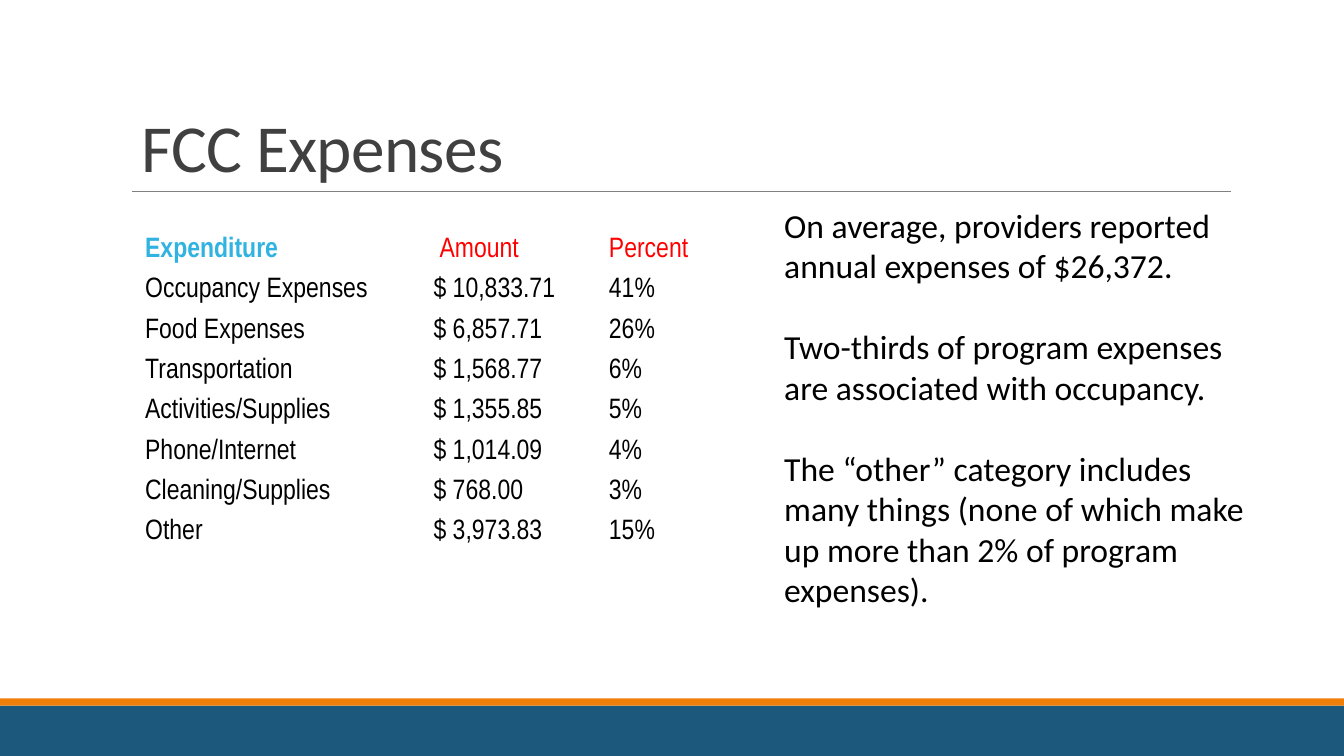
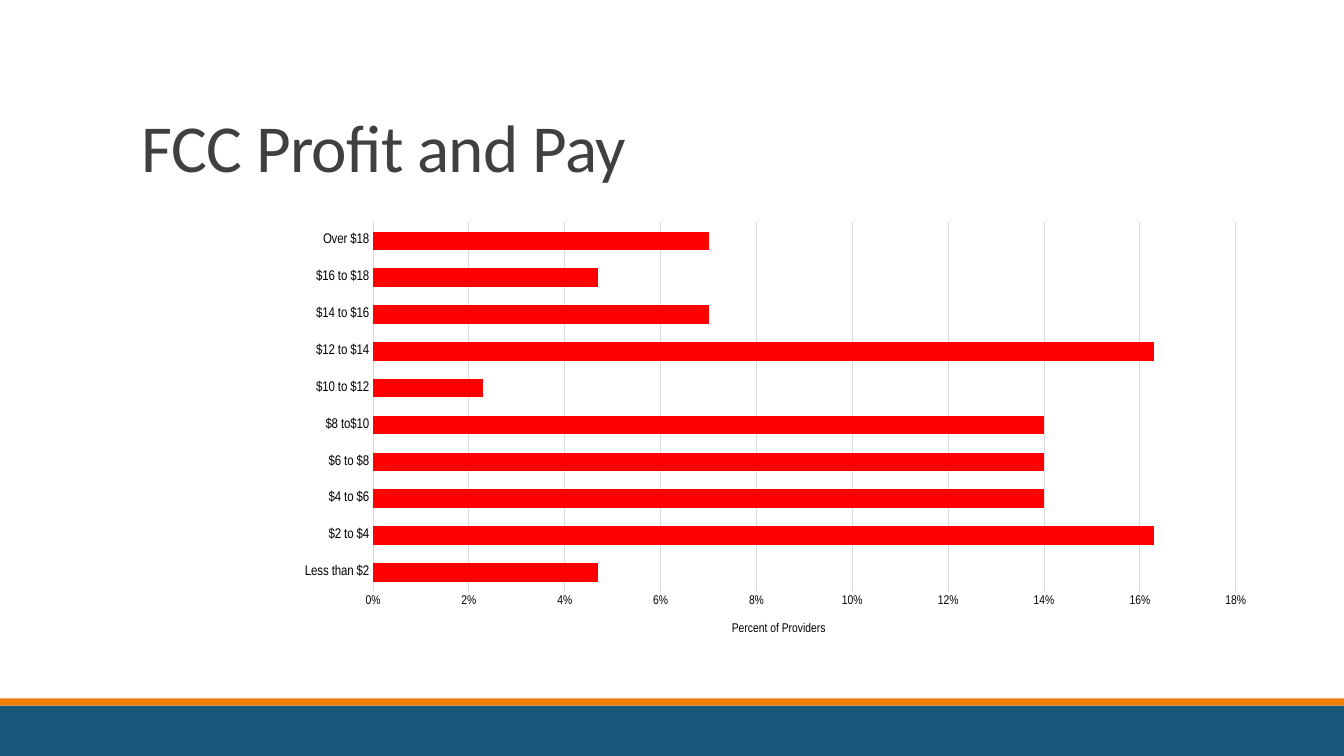
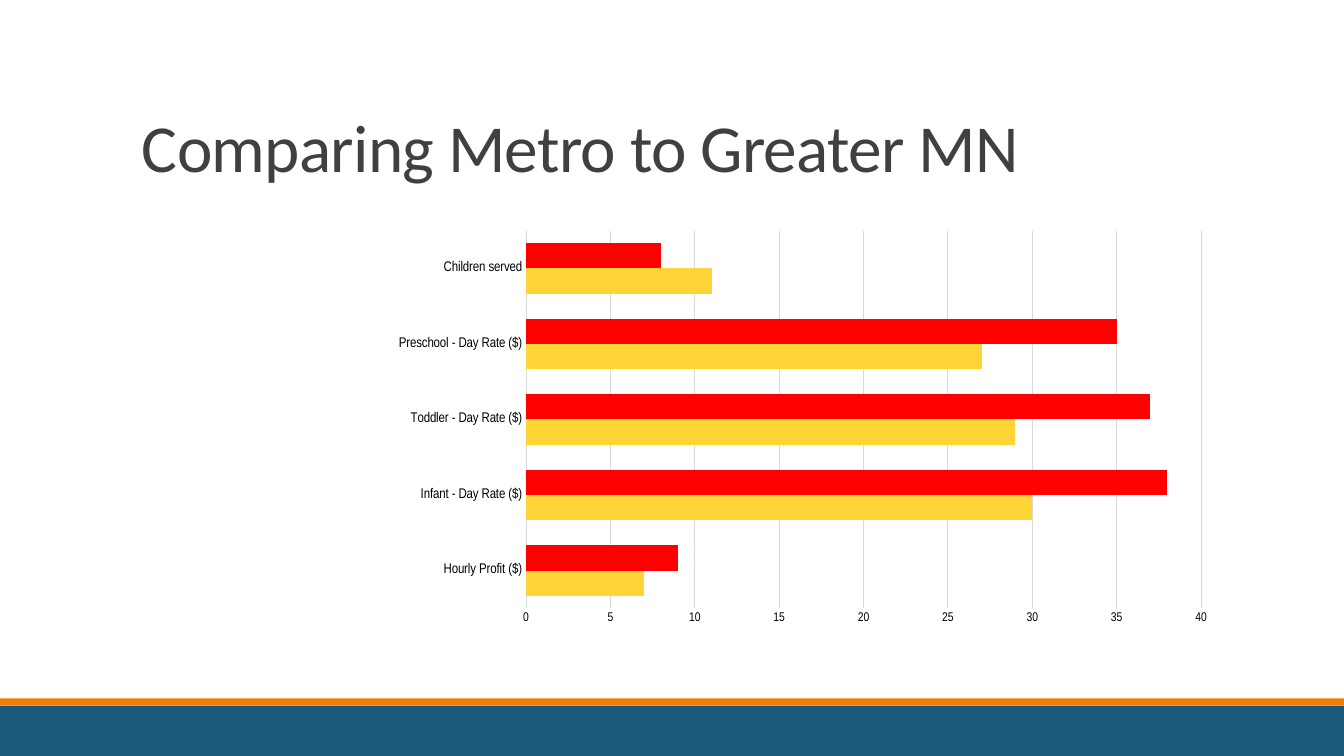
import dataclasses
import typing

import lxml.etree
import pptx
import pptx.chart.data
import pptx.dml.color
import pptx.enum.chart
import pptx.enum.shapes
import pptx.enum.text
import pptx.oxml
import pptx.oxml.ns
import pptx.util

Inches = pptx.util.Inches
Pt = pptx.util.Pt
qn = pptx.oxml.ns.qn

BODY = "Calibri"
NARROW = "Arial Narrow"
BLACK = "000000"
RED = "FF0000"
GOLD = "FFD436"
CYAN = "31B3E1"
GREY = "D9D9D9"
WHITE_FILL = (
    f'<c:spPr {pptx.oxml.ns.nsdecls("c", "a")}><a:solidFill>'
    '<a:srgbClr val="FFFFFF"/></a:solidFill><a:ln><a:noFill/></a:ln></c:spPr>'
)


@dataclasses.dataclass
class Band:
    top: float
    height: float
    color: str


@dataclasses.dataclass
class Series:
    name: str
    values: list[float]
    color: str


@dataclasses.dataclass
class Graph:
    box: tuple[float, float, float, float]
    plot: tuple[float, float, float, float]
    labels: list[str]
    series: list[Series]
    format: str
    top: float
    step: float
    title: str = ""
    title_at: tuple[float, float] = (0, 0)


BANDS = [Band(7, 0.5, "1B587C"), Band(6.93, 0.07, "F07F09")]

COSTS = [
    ("Expenditure", "Amount", "Percent"),
    ("Occupancy Expenses", "$ 10,833.71", "41%"),
    ("Food Expenses", "$ 6,857.71", "26%"),
    ("Transportation", "$ 1,568.77", "6%"),
    ("Activities/Supplies", "$ 1,355.85", "5%"),
    ("Phone/Internet", "$ 1,014.09", "4%"),
    ("Cleaning/Supplies", "$ 768.00", "3%"),
    ("Other", "$ 3,973.83", "15%"),
]

NOTES = [
    "On average, providers reported annual expenses of $26,372.",
    "Two-thirds of program expenses are associated with occupancy.",
    "The “other” category includes many things (none of which make up "
    "more than 2% of program expenses).",
]

PAY = Graph(
    box=(0.19, 1.43, 12.81, 5.36),
    plot=(0.274, 0.145, 0.668, 0.682),
    labels=["Less than $2", "$2 to $4", "$4 to $6", "$6 to $8", "$8 to$10",
            "$10 to $12", "$12 to $14", "$14 to $16", "$16 to $18", "Over $18"],
    series=[Series("Series 1", [0.047, 0.163, 0.14, 0.14, 0.14, 0.023,
                                0.163, 0.07, 0.047, 0.07], RED)],
    format="0%",
    top=0.18,
    step=0.02,
    title="Percent of Providers",
    title_at=(0.55, 0.88),
)

RATES = Graph(
    box=(0.66, 1.31, 11.87, 5.47),
    plot=(0.384, 0.179, 0.564, 0.685),
    labels=["Hourly Profit ($)", "Infant - Day Rate ($)", "Toddler - Day Rate ($)",
            "Preschool - Day Rate ($)", "Children served"],
    series=[Series("Series 1", [7, 30, 29, 27, 11], GOLD),
            Series("Series 2", [9, 38, 37, 35, 8], RED)],
    format="#,##0",
    top=40,
    step=5,
)


def color(code: str) -> pptx.dml.color.RGBColor:
    return pptx.dml.color.RGBColor.from_string(code)


def paint(fill: typing.Any, code: str) -> None:
    fill.solid()
    fill.fore_color.rgb = color(code)


def style(font: typing.Any, size: float, code: str = BLACK,
          name: str = NARROW, bold: bool = False) -> None:
    font.size = Pt(size)
    font.name = name
    font.bold = bold
    font.color.rgb = color(code)


def write(frame: typing.Any, *lines: str, size: float, code: str = BLACK,
          name: str = BODY, bold: bool = False, gap: float = 0,
          leading: float = 1, spacing: float = 0) -> None:
    frame.word_wrap = True
    for order, line in enumerate(lines):
        para = frame.add_paragraph() if order else frame.paragraphs[0]
        para.line_spacing = leading
        if order:
            para.space_before = Pt(gap)
        run = para.add_run()
        run.text = line
        style(run.font, size, code, name, bold)
        if spacing:
            run.font._element.set("spc", str(int(spacing * 100)))


def add_box(slide: typing.Any, left: float, top: float,
            width: float, height: float) -> typing.Any:
    box = slide.shapes.add_textbox(
        Inches(left), Inches(top), Inches(width), Inches(height))
    return box.text_frame


def add_base(deck: typing.Any) -> typing.Any:
    slide = deck.slides.add_slide(deck.slide_layouts[6])
    for band in BANDS:
        bar = slide.shapes.add_shape(
            pptx.enum.shapes.MSO_SHAPE.RECTANGLE, 0, Inches(band.top),
            deck.slide_width, Inches(band.height))
        bar.shadow.inherit = False
        paint(bar.fill, band.color)
        bar.line.fill.background()
    rule = slide.shapes.add_connector(
        pptx.enum.shapes.MSO_CONNECTOR.STRAIGHT,
        Inches(1.31), Inches(1.9), Inches(12.21), Inches(1.9))
    rule.line.color.rgb = color("808080")
    rule.line.width = Pt(0.5)
    lxml.etree.SubElement(rule._element.spPr, qn("a:effectLst"))
    return slide


def add_title(slide: typing.Any, text: str) -> None:
    frame = add_box(slide, 1.31, 0.31, 10.89, 1.59)
    frame.vertical_anchor = pptx.enum.text.MSO_ANCHOR.BOTTOM
    write(frame, text, size=48, code="404040", leading=0.85, spacing=-0.5)


def add_costs(slide: typing.Any) -> None:
    widths = [2.8, 1.8, 2.05]
    heights = [0.31] + [0.4] * (len(COSTS) - 1)
    table = slide.shapes.add_table(
        len(COSTS), len(widths), Inches(1.37), Inches(2.28),
        Inches(sum(widths)), Inches(sum(heights))).table
    table.first_row = table.horz_banding = False
    for column, width in zip(table.columns, widths):
        column.width = Inches(width)
    for row, height in zip(table.rows, heights):
        row.height = Inches(height)
    for down, line in enumerate(COSTS):
        for across, text in enumerate(line):
            cell = table.cell(down, across)
            head = down == 0
            indent = (0.12 if head else 0.06) if across == 1 else 0
            cell.margin_left = Inches(0.07 + indent)
            cell.margin_right = Inches(0.07)
            cell.margin_top = cell.margin_bottom = 0
            cell.vertical_anchor = pptx.enum.text.MSO_ANCHOR.BOTTOM
            cell.fill.background()
            first = head and across == 0
            code = CYAN if first else RED if head else BLACK
            write(cell.text_frame, text, size=20, code=code,
                  name=NARROW, bold=first)


def place(parent: typing.Any, index: int, **parts: typing.Any) -> None:
    for old in parent.findall(qn("c:layout")):
        parent.remove(old)
    layout = lxml.etree.Element(qn("c:layout"))
    manual = lxml.etree.SubElement(layout, qn("c:manualLayout"))
    for key, value in parts.items():
        lxml.etree.SubElement(manual, qn(f"c:{key}")).set("val", str(value))
    parent.insert(index, layout)


def add_graph(slide: typing.Any, graph: Graph) -> None:
    data = pptx.chart.data.CategoryChartData()
    data.categories = graph.labels
    for series in graph.series:
        data.add_series(series.name, series.values)
    chart = slide.shapes.add_chart(
        pptx.enum.chart.XL_CHART_TYPE.BAR_CLUSTERED,
        *map(Inches, graph.box), data).chart
    chart.has_title = chart.has_legend = False
    style(chart.font, 10, name=BODY)
    root = chart.element
    root.find(qn("c:chart")).addnext(pptx.oxml.parse_xml(WHITE_FILL))
    left, top, width, height = graph.plot
    place(root.find(".//" + qn("c:plotArea")), 0, layoutTarget="inner",
          xMode="edge", yMode="edge", x=left, y=top, w=width, h=height)

    plot = chart.plots[0]
    plot.vary_by_categories = False
    plot.gap_width = 100
    plot.overlap = 0
    for drawn, series in zip(plot.series, graph.series):
        drawn.invert_if_negative = False
        paint(drawn.format.fill, series.color)

    none = pptx.enum.chart.XL_TICK_MARK.NONE
    names, scale = chart.category_axis, chart.value_axis
    for axis, size in ((names, 10), (scale, 9)):
        axis.major_tick_mark = axis.minor_tick_mark = none
        style(axis.tick_labels.font, size)
    names.has_major_gridlines = False
    scale.has_major_gridlines = True
    for line in (names.format.line, scale.major_gridlines.format.line):
        line.color.rgb = color(GREY)
        line.width = Pt(0.75)
    scale.format.line.fill.background()
    scale.minimum_scale = 0
    scale.maximum_scale = graph.top
    scale.major_unit = graph.step
    scale.tick_labels.number_format = graph.format
    scale.tick_labels.number_format_is_linked = False
    if graph.title:
        title = scale.axis_title
        write(title.text_frame, graph.title, size=9, name=NARROW)
        left, top = graph.title_at
        place(title._element, 1, xMode="edge", yMode="edge", x=left, y=top)


def main() -> None:
    deck = pptx.Presentation()
    deck.slide_width = Inches(13.33)
    deck.slide_height = Inches(7.5)

    slide = add_base(deck)
    add_title(slide, "FCC Expenses")
    add_costs(slide)
    write(add_box(slide, 7.68, 1.98, 4.84, 4.14), *NOTES, size=24, gap=29.3)

    for title, graph in (("FCC Profit and Pay", PAY),
                         ("Comparing Metro to Greater MN", RATES)):
        slide = add_base(deck)
        add_graph(slide, graph)
        add_title(slide, title)

    deck.save("out.pptx")


if __name__ == "__main__":
    main()
